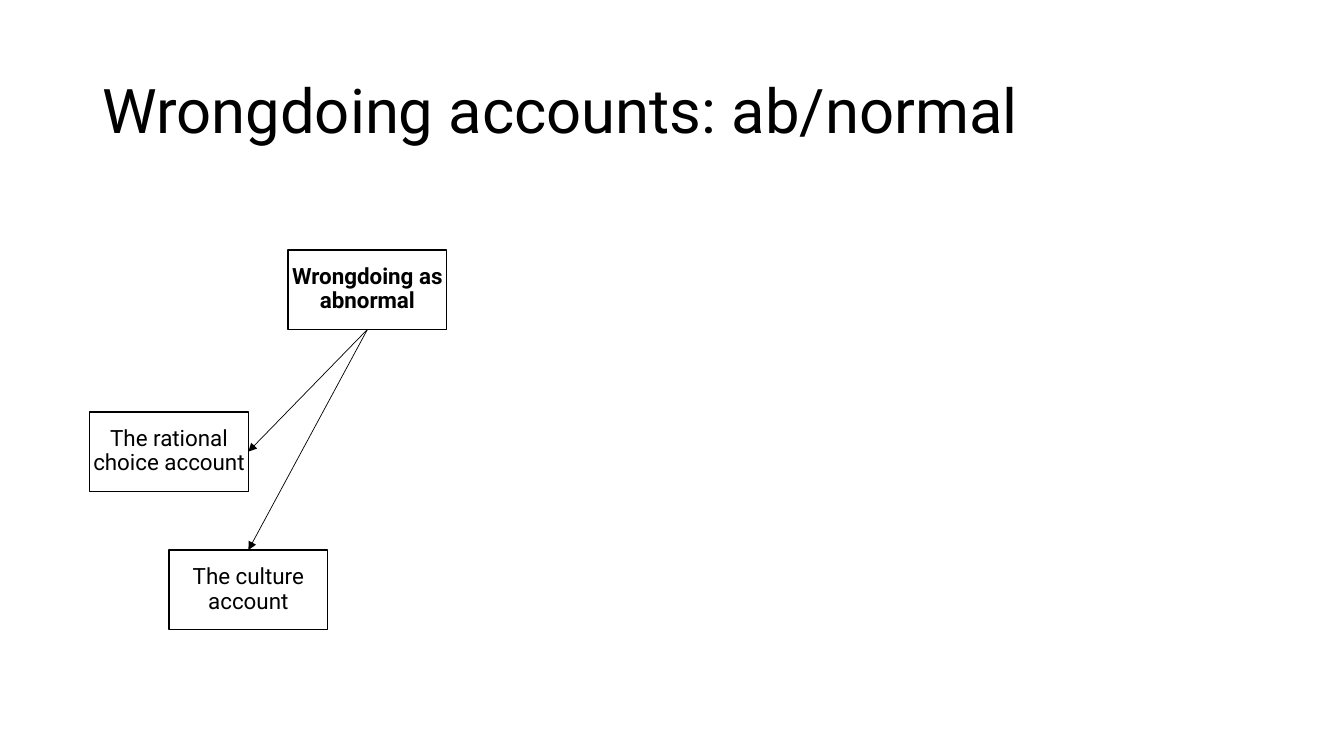
from lxml import etree
from pptx import Presentation
from pptx.dml.color import RGBColor
from pptx.enum.shapes import MSO_CONNECTOR, MSO_SHAPE
from pptx.enum.text import MSO_ANCHOR, PP_ALIGN
from pptx.oxml.ns import qn
from pptx.util import Cm, Pt

RECTANGLE = MSO_SHAPE.RECTANGLE
STRAIGHT = MSO_CONNECTOR.STRAIGHT
MIDDLE = MSO_ANCHOR.MIDDLE
LEFT, CENTER = PP_ALIGN.LEFT, PP_ALIGN.CENTER

COLORS = {"ink": "000000", "paper": "FFFFFF"}
FONT = "Roboto"
BOX_WIDTH, BOX_HEIGHT = 4, 2

# Connection sites of a rectangle
TOP, BOTTOM, RIGHT = 0, 2, 3


def color(name):
    return RGBColor.from_string(COLORS[name])


class DiagramSlide:
    """Holds the style and the slide being built."""

    def __init__(self, slide):
        self.slide = slide

    def set_text(self, shape, text, size, alignment, bold=False):
        frame = shape.text_frame
        frame.word_wrap = True
        frame.vertical_anchor = MIDDLE
        paragraph = frame.paragraphs[0]
        paragraph.text = text
        paragraph.alignment = alignment
        paragraph.line_spacing = 0.9
        font = paragraph.font
        font.name, font.size, font.bold = FONT, Pt(size), bold
        font.color.rgb = color("ink")

    def title(self, text, left, top, width, height):
        shape = self.slide.shapes.add_textbox(Cm(left), Cm(top), Cm(width), Cm(height))
        self.set_text(shape, text, 44, LEFT)

    def box(self, text, left, top, bold=False):
        shape = self.slide.shapes.add_shape(
            RECTANGLE, Cm(left), Cm(top), Cm(BOX_WIDTH), Cm(BOX_HEIGHT))
        shape.shadow.inherit = False
        shape.fill.solid()
        shape.fill.fore_color.rgb = color("paper")
        shape.line.color.rgb = color("ink")
        shape.line.width = Pt(1)
        frame = shape.text_frame
        frame.margin_left = frame.margin_right = Cm(0.03)
        frame.margin_top = frame.margin_bottom = Cm(0.03)
        self.set_text(shape, text, 16, CENTER, bold)
        return shape

    def arrow(self, source, source_site, target, target_site):
        connector = self.slide.shapes.add_connector(STRAIGHT, 0, 0, 0, 0)
        connector.begin_connect(source, source_site)
        connector.end_connect(target, target_site)
        connector.line.color.rgb = color("ink")
        connector.line.width = Pt(0.5)
        properties = connector.element.spPr
        outline = properties.find(qn("a:ln"))
        etree.SubElement(outline, qn("a:tailEnd"), type="triangle")
        etree.SubElement(properties, qn("a:effectLst"))


def main():
    presentation = Presentation()
    presentation.slide_width = Cm(33.87)
    presentation.slide_height = Cm(19.05)
    diagram = DiagramSlide(presentation.slides.add_slide(presentation.slide_layouts[6]))

    # Title
    diagram.title("Wrongdoing accounts: ab/normal", 2.33, 1.01, 29.21, 3.68)

    # Boxes
    abnormal = diagram.box("Wrongdoing as abnormal", 7.26, 6.3, bold=True)
    rational = diagram.box("The rational choice account", 2.26, 10.38)
    culture = diagram.box("The culture account", 4.26, 13.86)

    # Arrows
    diagram.arrow(abnormal, BOTTOM, rational, RIGHT)
    diagram.arrow(abnormal, BOTTOM, culture, TOP)

    presentation.save("out.pptx")


if __name__ == "__main__":
    main()
